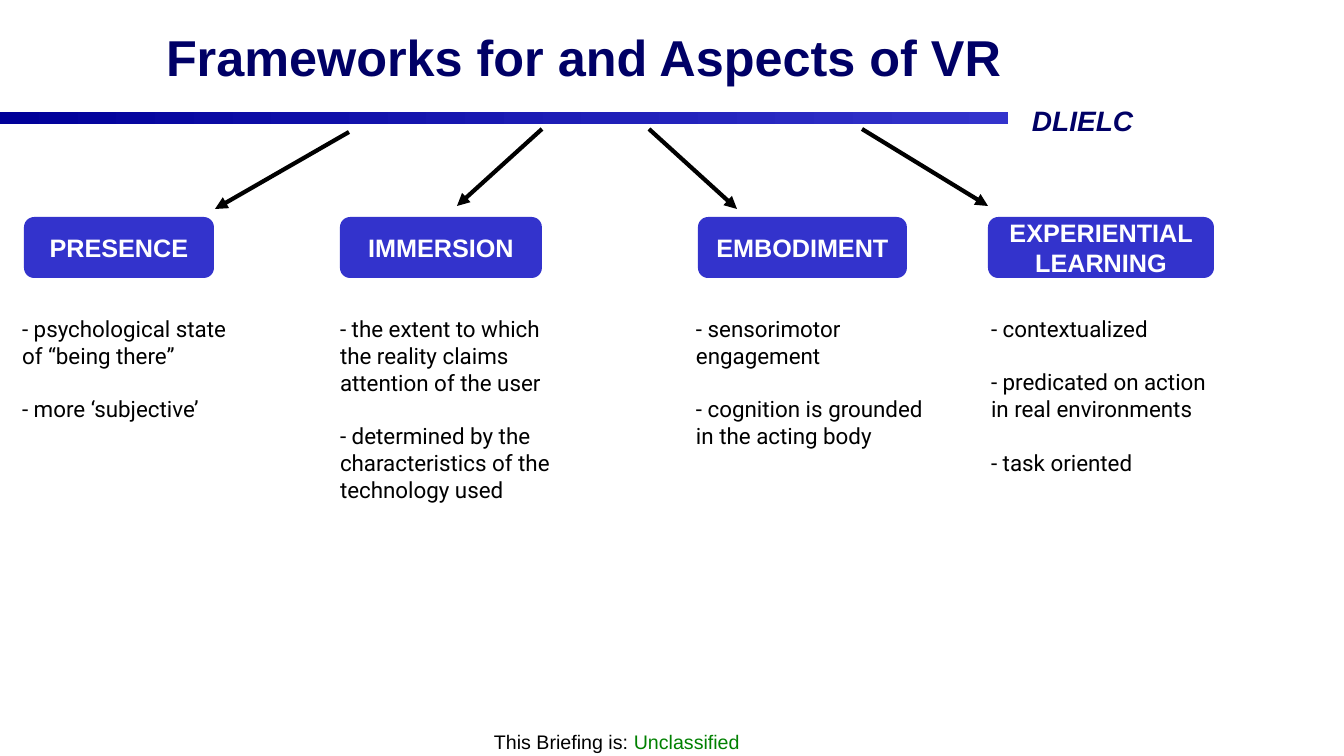
from dataclasses import dataclass

from lxml import etree
from pptx import Presentation
from pptx.dml.color import RGBColor
from pptx.enum.shapes import MSO_CONNECTOR, MSO_SHAPE
from pptx.enum.text import MSO_ANCHOR, PP_ALIGN
from pptx.oxml.ns import qn
from pptx.util import Pt

LEFT, CENTER = PP_ALIGN.LEFT, PP_ALIGN.CENTER
TOP, MIDDLE = MSO_ANCHOR.TOP, MSO_ANCHOR.MIDDLE
RECT, ROUND = MSO_SHAPE.RECTANGLE, MSO_SHAPE.ROUNDED_RECTANGLE
LINE = MSO_CONNECTOR.STRAIGHT
SCALE = 914400 / 100.8  # EMU in one px


@dataclass(frozen=True)
class Theme:
    navy: str = "000066"
    deep: str = "000099"
    blue: str = "3333CC"
    green: str = "008000"
    black: str = "000000"
    white: str = "FFFFFF"
    head: str = "Arial"
    body: str = "Roboto"
    title: int = 36
    brand: int = 20
    label: int = 18
    note: int = 16
    foot: int = 14


T = Theme()

# Box left and width, note left and width, arrow ends, label, notes
ASPECTS = [
    (24, 190, -2, 248, (349, 132, 215, 209), "PRESENCE",
     ["- psychological state of “being there”", "- more ‘subjective’"]),
    (340, 202, 316, 268, (542, 129, 457, 206), "IMMERSION",
     ["- the extent to which the reality claims attention of the user",
      "- determined by the characteristics of the technology used"]),
    (698, 209, 672, 268, (649, 129, 737, 209), "EMBODIMENT",
     ["- sensorimotor engagement",
      "- cognition is grounded in the acting body"]),
    (988, 226, 967, 268, (862, 129, 988, 206), "EXPERIENTIAL LEARNING",
     ["- contextualized", "- predicated on action in real environments",
      "- task oriented"]),
]


def px(n):
    return round(n * SCALE)


def rgb(code):
    return RGBColor.from_string(code)


def apply(item, form):
    for name, value in form.items():
        setattr(item, name, value)


def style(font, size, color, face=T.head, **more):
    apply(font, {"size": Pt(size), "name": face, **more})
    font.color.rgb = rgb(color)


def frame(shape, pad, anchor=TOP, wrap=True):
    """Set insets (side, top), anchor and wrap of a shape's text."""
    side, top = map(px, pad)
    body = shape.text_frame
    apply(body, {"margin_left": side, "margin_right": side,
                 "margin_top": top, "margin_bottom": top,
                 "vertical_anchor": anchor, "word_wrap": wrap})
    return body


def text_box(slide, area, pad, wrap=True):
    box = slide.shapes.add_textbox(*map(px, area))
    return frame(box, pad, wrap=wrap)


def block(slide, kind, area):
    shape = slide.shapes.add_shape(kind, *map(px, area))
    shape.shadow.inherit = False
    shape.line.fill.background()
    return shape


def add_title(slide, words):
    title = slide.shapes.title
    apply(title, dict(zip(("left", "top", "width", "height"),
                          map(px, (156, 20, 899, 72)))))
    para = frame(title, (10, 5), MIDDLE).paragraphs[0]
    para.text, para.alignment = words, LEFT
    style(para.font, T.title, T.navy, bold=True)


def add_band(slide):
    fill = block(slide, RECT, (0, 112, 1008, 12)).fill
    fill.gradient()
    fill.gradient_angle = 0
    for stop, color, place in zip(fill.gradient_stops, (T.deep, T.blue), (0, 1)):
        stop.color.rgb = rgb(color)
        stop.position = place


def add_brand(slide, words):
    para = text_box(slide, (1023, 99, 120, 43), (9, 4), False).paragraphs[0]
    para.text = words
    style(para.font, T.brand, T.navy, bold=True, italic=True)


def add_foot(slide, parts):
    para = text_box(slide, (494, 726, 382, 25), (0, 0)).paragraphs[0]
    para.line_spacing = 1.17
    for words, color in parts:
        run = para.add_run()
        run.text = words
        style(run.font, T.foot, color)


def add_label(slide, left, width, words):
    shape = block(slide, ROUND, (left, 217, width, 61))
    shape.fill.solid()
    shape.fill.fore_color.rgb = rgb(T.blue)
    para = frame(shape, (10, 10), MIDDLE).paragraphs[0]
    para.text, para.alignment = words, CENTER
    style(para.font, T.label, T.white, bold=True)


def add_notes(slide, left, width, notes):
    body = text_box(slide, (left, 305, width, 299), (10, 10))
    for i, words in enumerate(notes):
        para = body.add_paragraph() if i else body.paragraphs[0]
        para.text = words
        para._p.get_or_add_pPr().set("marL", str(px(14)))
        if i:
            para.space_before = Pt(19)
        style(para.font, T.note, T.black, T.body)


def add_arrow(slide, ends):
    arrow = slide.shapes.add_connector(LINE, *map(px, ends))
    arrow.line.width = Pt(3)
    arrow.line.color.rgb = rgb(T.black)
    etree.SubElement(arrow.line._get_or_add_ln(), qn("a:tailEnd"), type="triangle")
    etree.SubElement(arrow._element.spPr, qn("a:effectLst"))


def main():
    deck = Presentation()
    deck.slide_width, deck.slide_height = px(1344), px(756)
    slide = deck.slides.add_slide(deck.slide_layouts[5])

    # Header and footer
    add_band(slide)
    add_brand(slide, "DLIELC")
    add_title(slide, "Frameworks for and Aspects of VR")
    add_foot(slide, [("This Briefing is: ", T.black), ("Unclassified", T.green)])

    # Four aspects
    for left, width, start, span, ends, label, notes in ASPECTS:
        add_arrow(slide, ends)
        add_label(slide, left, width, label)
        add_notes(slide, start, span, notes)

    deck.save("out.pptx")


if __name__ == "__main__":
    main()
